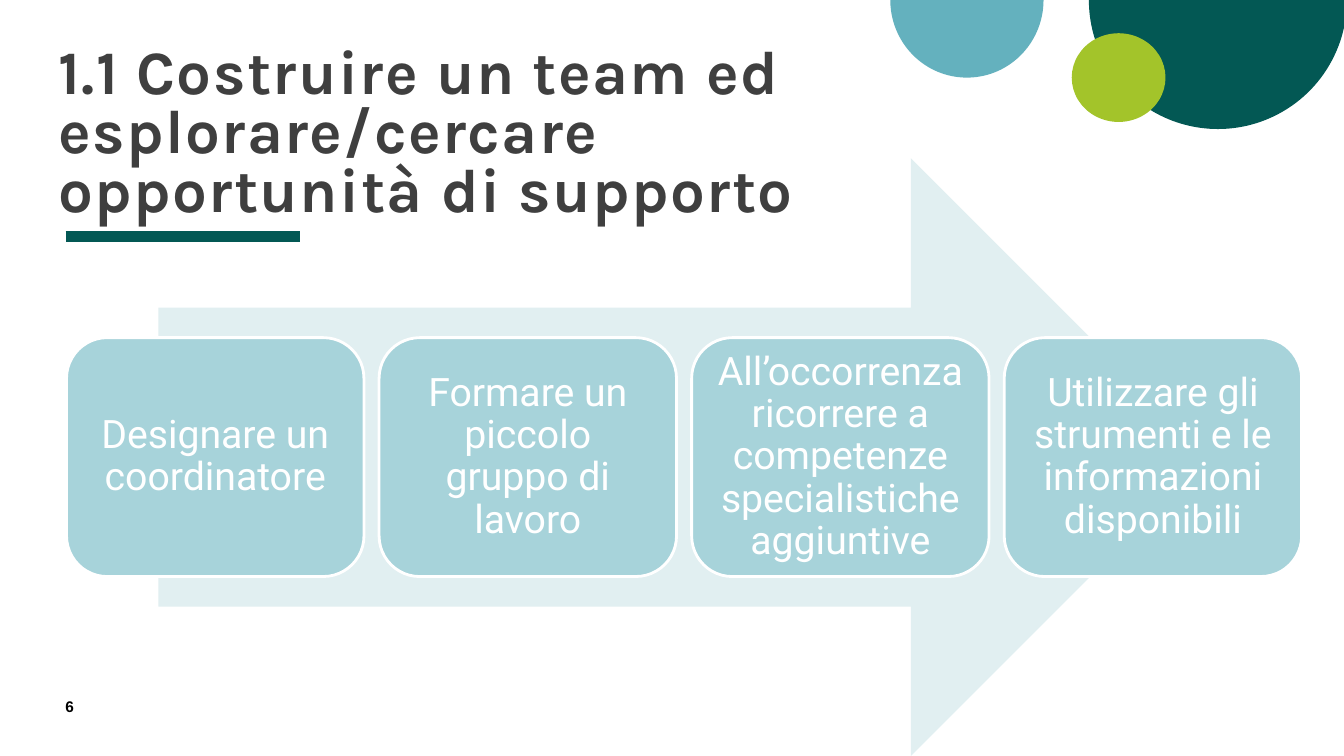
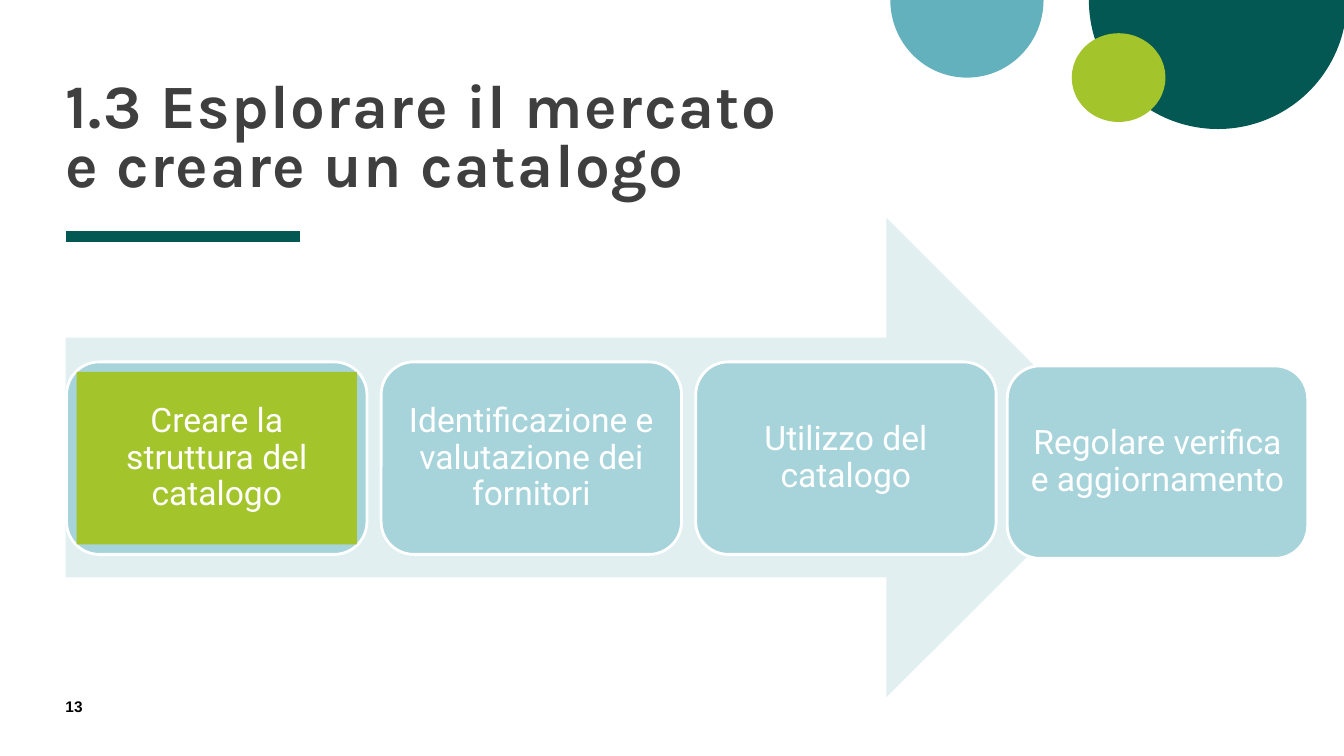
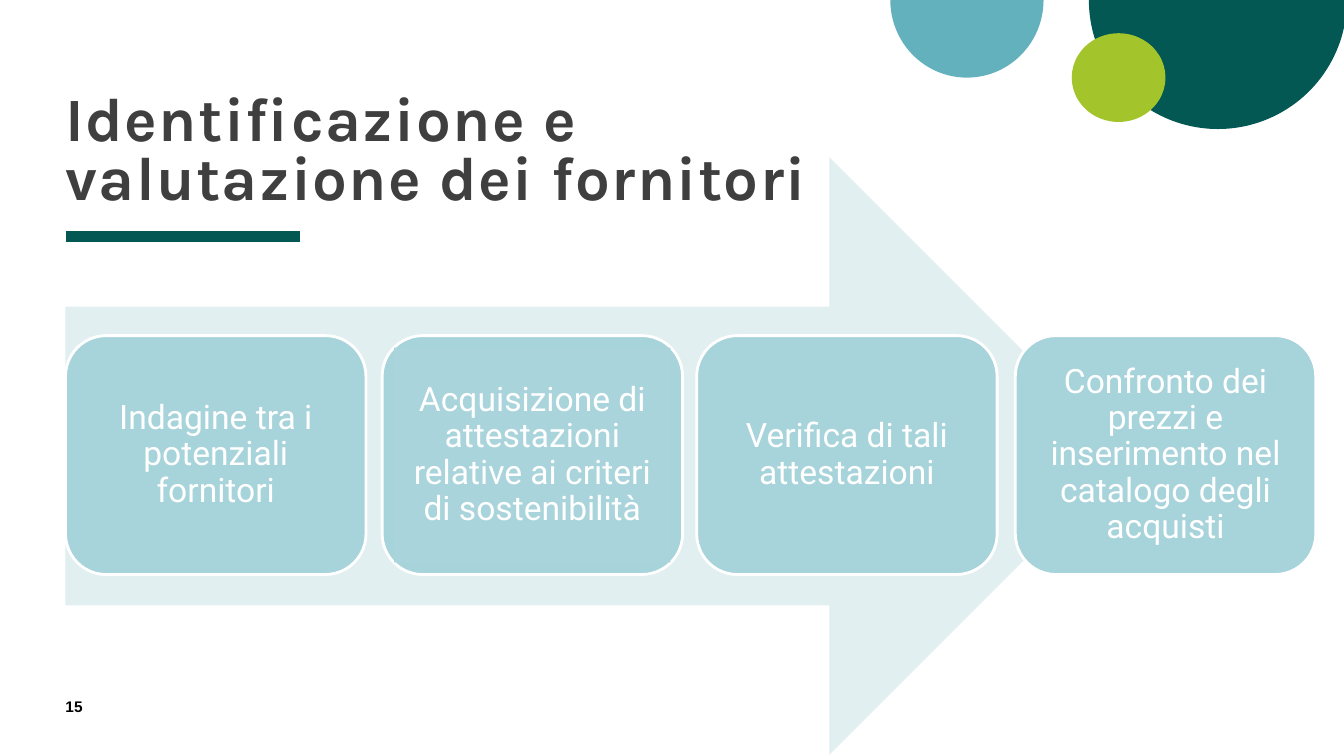
from dataclasses import dataclass

from pptx import Presentation
from pptx.dml.color import RGBColor
from pptx.enum.shapes import MSO_CONNECTOR, MSO_SHAPE
from pptx.enum.text import MSO_ANCHOR, PP_ALIGN
from pptx.oxml.ns import qn
from pptx.shapes.autoshape import Shape
from pptx.slide import Slide
from pptx.util import Emu, Pt

PIE, ELLIPSE, ARROW = MSO_SHAPE.PIE, MSO_SHAPE.OVAL, MSO_SHAPE.RIGHT_ARROW
CARD, PANEL = MSO_SHAPE.ROUNDED_RECTANGLE, MSO_SHAPE.RECTANGLE
STRAIGHT = MSO_CONNECTOR.STRAIGHT
TOP, MIDDLE, BOTTOM = MSO_ANCHOR.TOP, MSO_ANCHOR.MIDDLE, MSO_ANCHOR.BOTTOM
LEFT, CENTER = PP_ALIGN.LEFT, PP_ALIGN.CENTER

EMU_PER_PX = 9144  # 100 px to the inch
SLIDE_SIZE = (1333, 750)
COLORS = {
    "dark_green": "035854",
    "teal": "64B1BE",
    "lime": "A3C42A",
    "title": "3F3F3F",
    "number": "000000",
    "arrow": "E1EFF1",
    "card": "A7D3DA",
    "panel": "A9D4DB",
    "white": "FFFFFF",
}
CARD_ROUNDING = 0.17
CORNER_INSET = 0.05  # share of the card height taken by its rounded corner
CARD_PADDING = 12


@dataclass(frozen=True)
class Box:
    left: int
    top: int
    width: int
    height: int

    def emu(self) -> tuple[Emu, Emu, Emu, Emu]:
        return px(self.left), px(self.top), px(self.width), px(self.height)

    def inset(self, margin: int) -> "Box":
        return Box(self.left + margin, self.top + margin,
                   self.width - 2 * margin, self.height - 2 * margin)


@dataclass(frozen=True)
class TextStyle:
    font: str
    size: int
    color: str
    bold: bool = False
    align: PP_ALIGN = LEFT
    anchor: MSO_ANCHOR = TOP
    line_spacing: float = 1.0
    letter_spacing: int = 0  # hundredths of a point


@dataclass(frozen=True)
class Step:
    text: str
    shift_x: int = 0
    shift_y: int = 0
    panel: str = ""


@dataclass(frozen=True)
class Process:
    number: int
    title: str
    title_box: Box
    arrow: Box
    first_card: Box
    pitch: int
    text_size: int
    steps: tuple[Step, ...]
    title_bottom: int = 0


TITLE = TextStyle("Karla", 44, "title", bold=True, anchor=BOTTOM,
                  line_spacing=0.8, letter_spacing=100)
NUMBER = TextStyle("Arial", 11, "number", bold=True)
NUMBER_BOX = Box(65, 692, 57, 27)

PROCESSES = (
    Process(
        6, "1.1 Costruire un team ed esplorare/cercare opportunità di supporto",
        Box(58, 17, 860, 206), Box(157, 157, 1043, 593),
        Box(66, 335, 295, 237), 310, 28,
        (
            Step("Designare un coordinatore"),
            Step("Formare un piccolo gruppo di lavoro"),
            Step("All’occorrenza ricorrere a competenze specialistiche aggiuntive"),
            Step("Utilizzare gli strumenti e le informazioni disponibili"),
        ),
    ),
    Process(
        13, "1.3 Esplorare il mercato e creare un catalogo",
        Box(65, 93, 742, 174), Box(65, 216, 1052, 476),
        Box(66, 359, 298, 191), 312, 24,
        (
            Step("Creare la struttura del catalogo", panel="lime"),
            Step("Identificazione e valutazione dei fornitori"),
            Step("Utilizzo del catalogo"),
            Step("Regolare verifica e aggiornamento", shift_x=-3, shift_y=4),
        ),
        title_bottom=69,
    ),
    Process(
        15, "Identificazione e valutazione dei fornitori",
        Box(65, 37, 742, 174), Box(65, 156, 1054, 593),
        Box(65, 333, 298, 237), 314, 24,
        (
            Step("Indagine tra i potenziali fornitori"),
            Step("Acquisizione di attestazioni relative ai criteri di sostenibilità",
                 panel="panel"),
            Step("Verifica di tali attestazioni", shift_x=-2),
            Step("Confronto dei prezzi e inserimento nel catalogo degli acquisti"),
        ),
    ),
)


def px(length: int) -> Emu:
    return Emu(length * EMU_PER_PX)


def rgb(name: str) -> RGBColor:
    return RGBColor.from_string(COLORS[name])


def add_filled(slide: Slide, kind: MSO_SHAPE, box: Box, color: str) -> Shape:
    shape = slide.shapes.add_shape(kind, *box.emu())
    shape.shadow.inherit = False
    shape.fill.solid()
    shape.fill.fore_color.rgb = rgb(color)
    shape.line.fill.background()
    return shape


def write_text(shape: Shape, text: str, style: TextStyle,
               padding: int = 0, bottom: int = 0) -> None:
    frame = shape.text_frame
    frame.word_wrap = True
    frame.vertical_anchor = style.anchor
    frame.margin_left = frame.margin_right = frame.margin_top = px(padding)
    frame.margin_bottom = px(padding + bottom)
    paragraph = frame.paragraphs[0]
    paragraph.text = text
    paragraph.alignment = style.align
    paragraph.line_spacing = style.line_spacing
    font = paragraph.font
    font.name = style.font
    font.size = Pt(style.size)
    font.bold = style.bold
    font.color.rgb = rgb(style.color)
    if style.letter_spacing:
        font._rPr.set("spc", str(style.letter_spacing))


def add_text(slide: Slide, box: Box, text: str, style: TextStyle,
             bottom: int = 0) -> None:
    write_text(slide.shapes.add_textbox(*box.emu()), text, style, bottom=bottom)


def add_half_circle(slide: Slide, box: Box, color: str) -> None:
    shape = add_filled(slide, PIE, box, color)
    shape.adjustments[0] = 0
    shape.adjustments[1] = 108  # 180 degrees


def add_decoration(slide: Slide) -> None:
    add_half_circle(slide, Box(1080, -128, 256, 256), "dark_green")
    rule = slide.shapes.add_connector(STRAIGHT, px(65), px(235), px(298), px(235))
    rule.line.color.rgb = rgb("dark_green")
    rule.line.width = Pt(8)
    rule._element.spPr.append(rule._element.makeelement(qn("a:effectLst"), {}))
    add_half_circle(slide, Box(883, -77, 152, 154), "teal")
    add_filled(slide, ELLIPSE, Box(1063, 33, 93, 88), "lime")


def add_step(slide: Slide, box: Box, step: Step, style: TextStyle) -> None:
    holder = add_filled(slide, CARD, box, "card")
    holder.adjustments[0] = CARD_ROUNDING
    holder.line.color.rgb = rgb("white")
    holder.line.width = Pt(2)
    if step.panel:
        margin = round(box.height * CORNER_INSET)
        holder = add_filled(slide, PANEL, box.inset(margin), step.panel)
    write_text(holder, step.text, style, CARD_PADDING)


def build_slide(presentation: Presentation, process: Process) -> None:
    slide = presentation.slides.add_slide(presentation.slide_layouts[6])
    add_decoration(slide)

    # Title and slide number
    add_text(slide, process.title_box, process.title, TITLE, process.title_bottom)
    add_text(slide, NUMBER_BOX, str(process.number), NUMBER)

    # Arrow with its row of steps
    add_filled(slide, ARROW, process.arrow, "arrow")
    style = TextStyle("Roboto", process.text_size, "white", align=CENTER,
                      anchor=MIDDLE, line_spacing=0.9)
    first = process.first_card
    for index, step in enumerate(process.steps):
        box = Box(first.left + index * process.pitch + step.shift_x,
                  first.top + step.shift_y, first.width, first.height)
        add_step(slide, box, step, style)


def main() -> None:
    presentation = Presentation()
    presentation.slide_width, presentation.slide_height = map(px, SLIDE_SIZE)
    for process in PROCESSES:
        build_slide(presentation, process)
    presentation.save("out.pptx")


if __name__ == "__main__":
    main()
